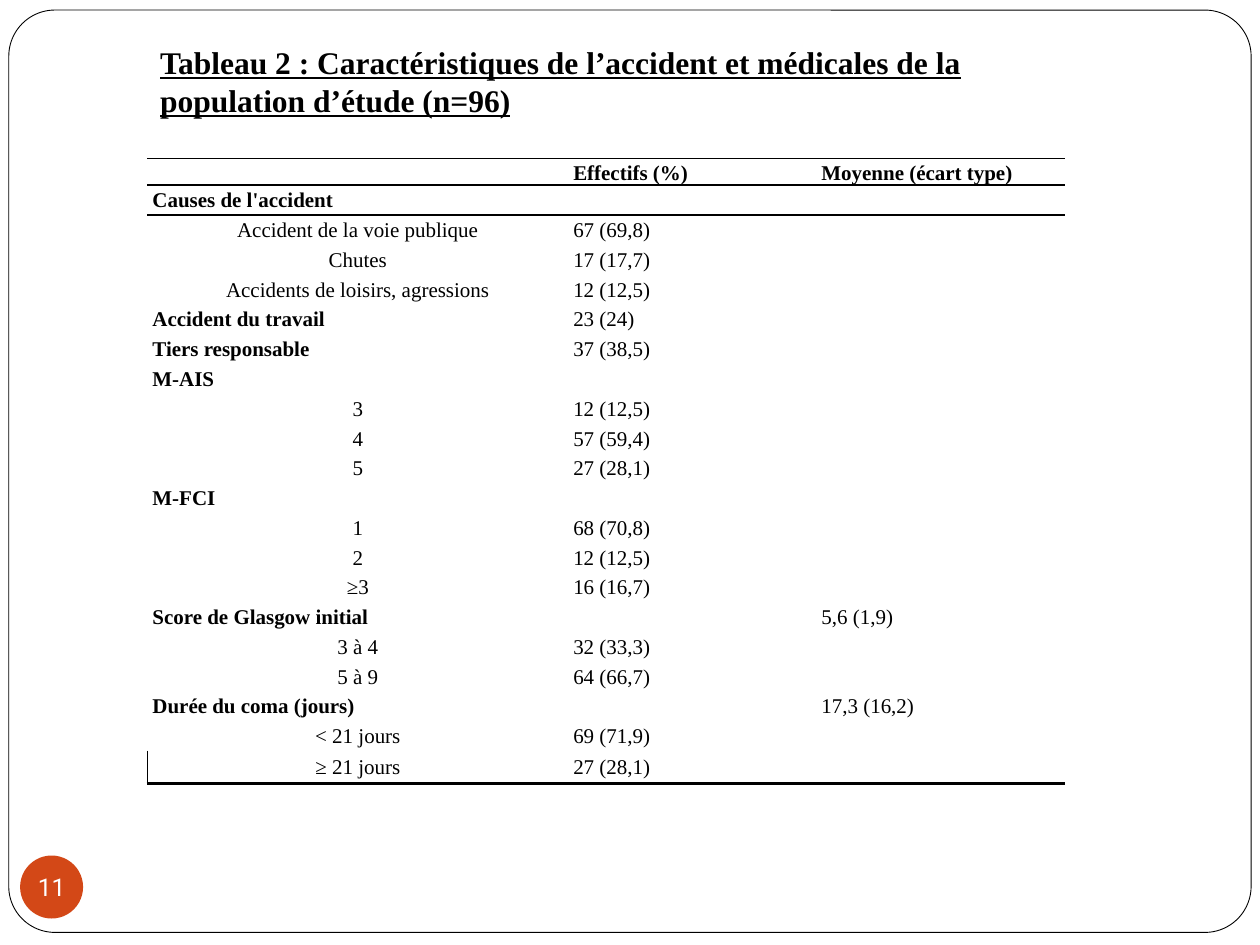
from dataclasses import dataclass

from lxml.etree import SubElement
from pptx import Presentation
from pptx.dml.color import RGBColor
from pptx.enum.shapes import MSO_SHAPE
from pptx.enum.text import MSO_ANCHOR, PP_ALIGN
from pptx.oxml.ns import qn
from pptx.util import Inches, Pt


@dataclass(frozen=True)
class Theme:
    ink: str = "000000"
    paper: str = "FFFFFF"
    accent: str = "D34817"
    serif: str = "Times New Roman"
    sans: str = "Roboto"
    title_size: int = 18
    body_size: int = 12
    number_size: int = 14
    plain_style: str = "{2D5ABB26-0587-4C30-8999-92F81FD0307C}"


THEME = Theme()
TITLE = "Tableau 2 : Caractéristiques de l’accident et médicales de la population d’étude (n=96)"
HEADER = ("", "Effectifs (%)", "Moyenne (écart type)")
GROUPS = [
    ("Causes de l'accident", "", "", [
        ("Accident de la voie publique", "67 (69,8)"),
        ("Chutes", "17 (17,7)"),
        ("Accidents de loisirs, agressions", "12 (12,5)"),
    ]),
    ("Accident du travail", "23 (24)", "", []),
    ("Tiers responsable", "37 (38,5)", "", []),
    ("M-AIS", "", "", [("3", "12 (12,5)"), ("4", "57 (59,4)"), ("5", "27 (28,1)")]),
    ("M-FCI", "", "", [("1", "68 (70,8)"), ("2", "12 (12,5)"), ("≥3", "16 (16,7)")]),
    ("Score de Glasgow initial", "", "5,6 (1,9)", [
        ("3 à 4", "32 (33,3)"),
        ("5 à 9", "64 (66,7)"),
    ]),
    ("Durée du coma (jours)", "", "17,3 (16,2)", [
        ("< 21 jours", "69 (71,9)"),
        ("≥ 21 jours", "27 (28,1)"),
    ]),
]


def write(tf, text, size=THEME.body_size, font=THEME.serif, color=THEME.ink,
          bold=False, underline=False, align=PP_ALIGN.LEFT, spacing=1.0):
    p = tf.paragraphs[0]
    p.alignment = align
    p.line_spacing = spacing
    if not text:
        SubElement(p._p, qn("a:endParaRPr"), sz=str(size * 100))
        return
    r = p.add_run()
    r.text = text
    r.font.size = Pt(size)
    r.font.name = font
    r.font.bold = bold
    r.font.underline = underline
    r.font.color.rgb = RGBColor.from_string(color)


def set_borders(cell, **widths):
    tc_pr = cell._tc.get_or_add_tcPr()
    for side in "LRTB":
        if side in widths:
            ln = SubElement(tc_pr, qn(f"a:ln{side}"), w=str(Pt(widths[side])))
            fill = SubElement(ln, qn("a:solidFill"))
            SubElement(fill, qn("a:srgbClr"), val=THEME.ink)


def add_preset(slide, kind, box, fill):
    s = slide.shapes.add_shape(kind, *map(Inches, box))
    s.shadow.inherit = False
    s.fill.solid()
    s.fill.fore_color.rgb = RGBColor.from_string(fill)
    s.line.fill.background()
    return s


def add_frame(slide, box):
    s = add_preset(slide, MSO_SHAPE.ROUNDED_RECTANGLE, box, THEME.paper)
    s.adjustments[0] = 0.05
    s.line.color.rgb = RGBColor.from_string(THEME.ink)
    s.line.width = Pt(0.5)


def add_page_number(slide, box, number):
    tf = add_preset(slide, MSO_SHAPE.OVAL, box, THEME.accent).text_frame
    tf.margin_left = tf.margin_right = tf.margin_top = tf.margin_bottom = 0
    tf.vertical_anchor = MSO_ANCHOR.MIDDLE
    tf.word_wrap = False
    write(tf, number, size=THEME.number_size, font=THEME.sans,
          color=THEME.paper, align=PP_ALIGN.CENTER)


def table_rows():
    rows = [(HEADER, "header")]
    for label, count, mean, items in GROUPS:
        rows.append(((label, count, mean), "group"))
        rows.extend(((item, value, ""), "item") for item, value in items)
    return rows


def add_results_table(slide, box):
    left, top, width, height = box
    rows = table_rows()
    last = len(rows) - 1
    head_h, last_h, value_w = 0.21, 0.26, 1.97
    body_h = (height - head_h - last_h) / (last - 1)
    table = slide.shapes.add_table(len(rows), len(HEADER), *map(Inches, box)).table
    table.first_row = table.horz_banding = False
    table._tbl.tblPr.find(qn("a:tableStyleId")).text = THEME.plain_style
    for column, w in zip(table.columns, (width - 2 * value_w, value_w, value_w)):
        column.width = Inches(w)

    for i, (texts, kind) in enumerate(rows):
        table.rows[i].height = Inches({0: head_h, last: last_h}.get(i, body_h))
        for j, text in enumerate(texts):
            cell = table.cell(i, j)
            cell.margin_left = cell.margin_right = Inches(0.04)
            cell.margin_top = cell.margin_bottom = 0
            cell.vertical_anchor = MSO_ANCHOR.BOTTOM if kind == "header" else MSO_ANCHOR.MIDDLE
            if kind == "header":
                set_borders(cell, T=1, B=1)
            elif i == 1:
                set_borders(cell, T=1)
            elif i == last:
                set_borders(cell, B=1.5, **({"L": 1} if j == 0 else {}))
            cell.fill.background()
            centred = kind == "item" and j == 0
            write(cell.text_frame, text, spacing=1.07,
                  bold=kind == "header" or (kind == "group" and j == 0),
                  align=PP_ALIGN.CENTER if centred else PP_ALIGN.LEFT)


def place_title(slide, box, text):
    s = slide.shapes.title
    s.left, s.top, s.width, s.height = map(Inches, box)
    s.text_frame.word_wrap = True
    s.text_frame.vertical_anchor = MSO_ANCHOR.TOP
    write(s.text_frame, text, size=THEME.title_size, bold=True, underline=True)
    s.element.getparent().append(s.element)


def main():
    prs = Presentation()
    prs.slide_width, prs.slide_height = Inches(10), Inches(7.5)
    slide = prs.slides.add_slide(prs.slide_layouts[5])
    add_frame(slide, (0.07, 0.08, 9.86, 7.32))
    add_page_number(slide, (0.16, 6.79, 0.5, 0.5), "11")
    add_results_table(slide, (1.17, 1.26, 7.28, 4.96))
    place_title(slide, (1.17, 0.29, 7.31, 0.71), TITLE)
    prs.save("out.pptx")


if __name__ == "__main__":
    main()
